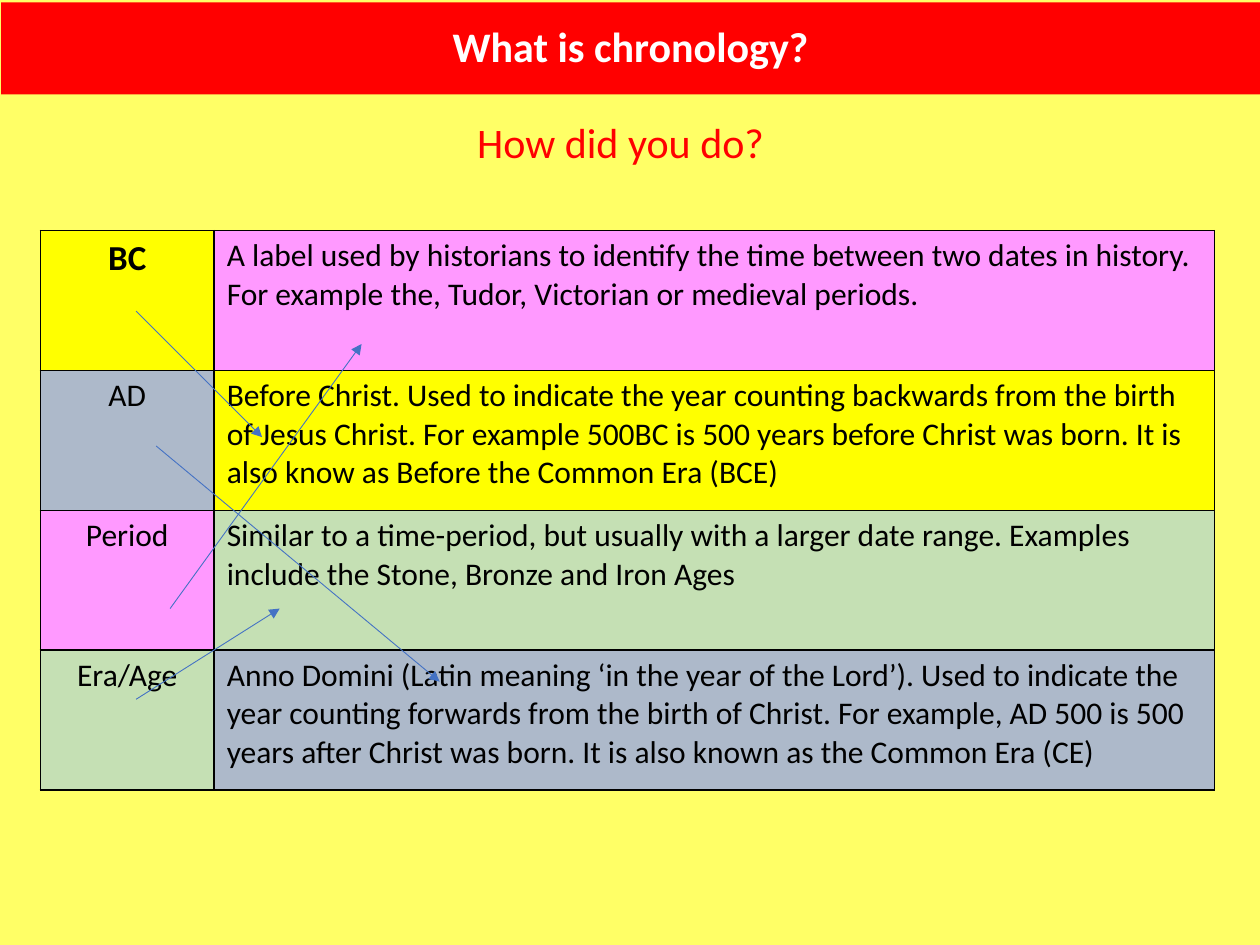
from lxml import etree
from pptx import Presentation
from pptx.dml.color import RGBColor
from pptx.enum import shapes, text
from pptx.oxml import ns
from pptx.util import Inches, Pt

FONT = "Calibri"
PAGE_YELLOW = RGBColor(0xFF, 0xFF, 0x66)
RED = RGBColor(0xFF, 0x00, 0x00)
WHITE = RGBColor(0xFF, 0xFF, 0xFF)
BLACK = RGBColor(0x00, 0x00, 0x00)
YELLOW = RGBColor(0xFF, 0xFF, 0x00)
PINK = RGBColor(0xFF, 0x99, 0xFF)
GREEN = RGBColor(0xC5, 0xE0, 0xB4)
GREY_BLUE = RGBColor(0xAD, 0xB9, 0xCA)
ARROW_BLUE = RGBColor(0x44, 0x72, 0xC4)

# Content: term, its colour, definition, colour of the matching term
TITLE = "What is chronology?"
QUESTION = "How did you do?"
ROWS = [
    ("BC", YELLOW,
     "A label used by historians to identify the time between two dates in "
     "history. For example the, Tudor, Victorian or medieval periods.", PINK),
    ("AD", GREY_BLUE,
     "Before Christ. Used to indicate the year counting backwards from the "
     "birth of Jesus Christ. For example 500BC is 500 years before Christ was "
     "born. It is also know as Before the Common Era (BCE)", YELLOW),
    ("Period", PINK,
     "Similar to a time-period, but usually with a larger date range. "
     "Examples include the Stone, Bronze and Iron Ages", GREEN),
    ("Era/Age", GREEN,
     "Anno Domini (Latin meaning ‘in the year of the Lord’). Used to indicate "
     "the year counting forwards from the birth of Christ. For example, AD 500 "
     "is 500 years after Christ was born. It is also known as the Common Era "
     "(CE)", GREY_BLUE),
]
COLUMN_WIDTHS = (1.38, 7.94)
ROW_HEIGHT = 1.11
ANSWER_ARROWS = [  # start x, y, end x, y
    (1.08, 2.47, 2.08, 3.47),
    (1.08, 5.55, 2.22, 4.83),
    (1.35, 4.83, 2.87, 2.73),
    (1.24, 3.54, 3.49, 5.41),
]


def write(frame, words, size, color, bold=False, centred=True, spacing=None):
    frame.word_wrap = True
    para = frame.paragraphs[0]
    para.alignment = text.PP_ALIGN.CENTER if centred else text.PP_ALIGN.LEFT
    if spacing:
        para.line_spacing = spacing
    span = para.add_run()
    span.text = words
    span.font.name = FONT
    span.font.size = Pt(size)
    span.font.bold = bold
    span.font.color.rgb = color


def add_borders(cell, color, width):
    properties = cell._tc.get_or_add_tcPr()
    for index, side in enumerate(("lnL", "lnR", "lnT", "lnB")):
        line = etree.Element(ns.qn(f"a:{side}"), w=str(Pt(width)))
        fill = etree.SubElement(line, ns.qn("a:solidFill"))
        etree.SubElement(fill, ns.qn("a:srgbClr"), val=str(color))
        properties.insert(index, line)


def fill_cell(cell, words, fill, size, bold, centred):
    cell.fill.solid()
    cell.fill.fore_color.rgb = fill
    write(cell.text_frame, words, size, BLACK, bold, centred)
    add_borders(cell, BLACK, 1)


def add_arrow(page, ends):
    arrow = page.shapes.add_connector(
        shapes.MSO_CONNECTOR.STRAIGHT, *(Inches(value) for value in ends))
    arrow.line.color.rgb = ARROW_BLUE
    arrow.line.width = Pt(0.5)
    etree.SubElement(arrow.line._get_or_add_ln(), ns.qn("a:tailEnd"),
                     type="triangle")
    etree.SubElement(arrow._element.spPr, ns.qn("a:effectLst"))


def main():
    deck = Presentation()
    deck.slide_width, deck.slide_height = Inches(10), Inches(7.5)
    page = deck.slides.add_slide(deck.slide_layouts[6])
    page.background.fill.solid()
    page.background.fill.fore_color.rgb = PAGE_YELLOW

    # Question under the title
    box = page.shapes.add_textbox(
        Inches(0.17), Inches(0.92), Inches(9.51), Inches(1.05))
    write(box.text_frame, QUESTION, 24, RED, spacing=0.9)

    # Terms and definitions
    table = page.shapes.add_table(
        len(ROWS), 2, Inches(0.32), Inches(1.83),
        Inches(sum(COLUMN_WIDTHS)), Inches(ROW_HEIGHT * len(ROWS))).table
    for column, width in zip(table.columns, COLUMN_WIDTHS):
        column.width = Inches(width)
    for index, (term, term_fill, meaning, meaning_fill) in enumerate(ROWS):
        table.rows[index].height = Inches(ROW_HEIGHT)
        first = index == 0
        fill_cell(table.cell(index, 0), term, term_fill,
                  20 if first else 18, first, True)
        fill_cell(table.cell(index, 1), meaning, meaning_fill,
                  18, False, False)

    # Arrows from each term to its definition
    for ends in ANSWER_ARROWS:
        add_arrow(page, ends)

    # Title banner
    banner = page.shapes.add_shape(
        shapes.MSO_SHAPE.RECTANGLE,
        Inches(0.01), Inches(0.02), Inches(9.99), Inches(0.73))
    banner.shadow.inherit = False
    banner.fill.solid()
    banner.fill.fore_color.rgb = RED
    banner.line.fill.background()
    banner.text_frame.vertical_anchor = text.MSO_ANCHOR.MIDDLE
    write(banner.text_frame, TITLE, 24, WHITE, bold=True, spacing=0.9)

    deck.save("out.pptx")


if __name__ == "__main__":
    main()
